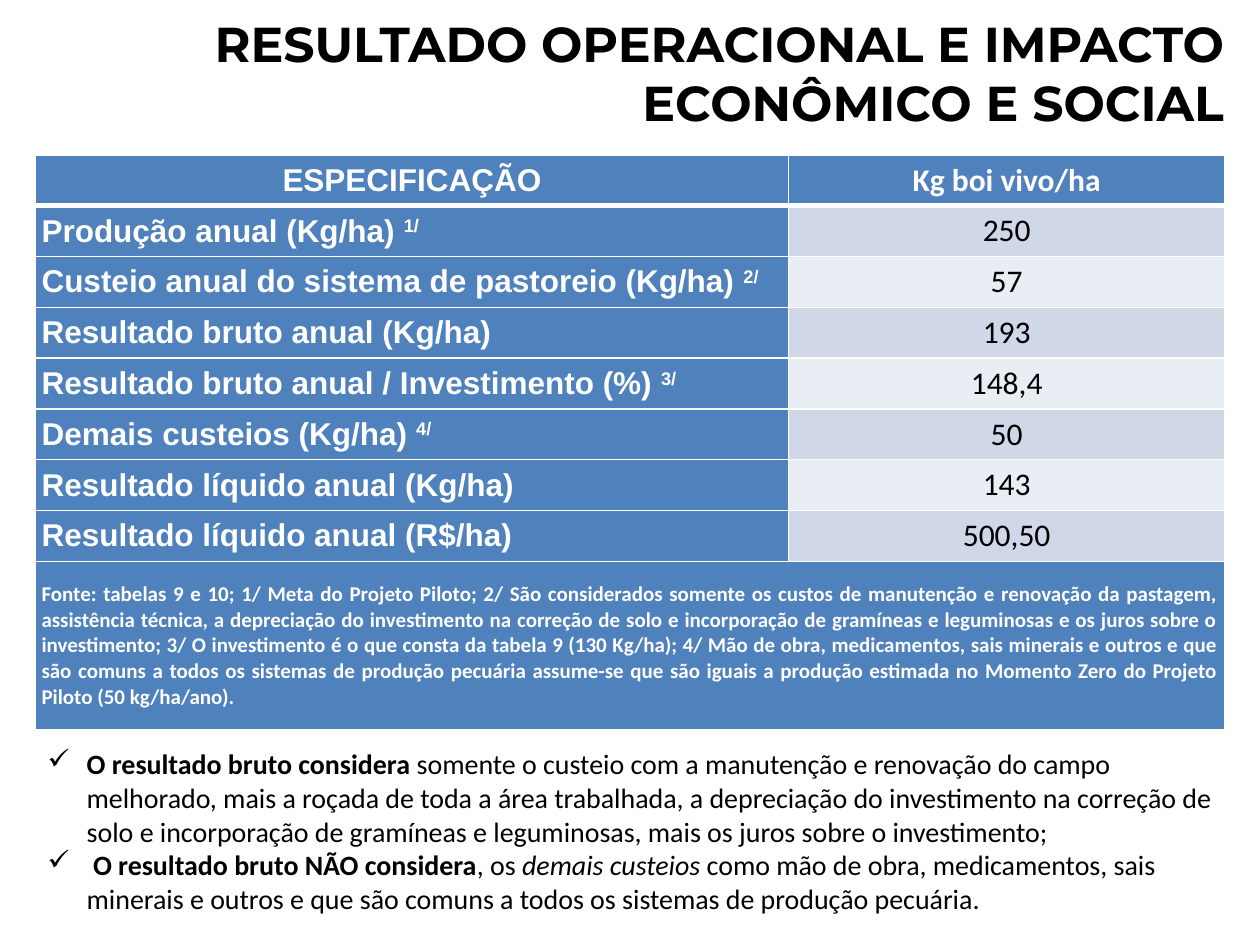
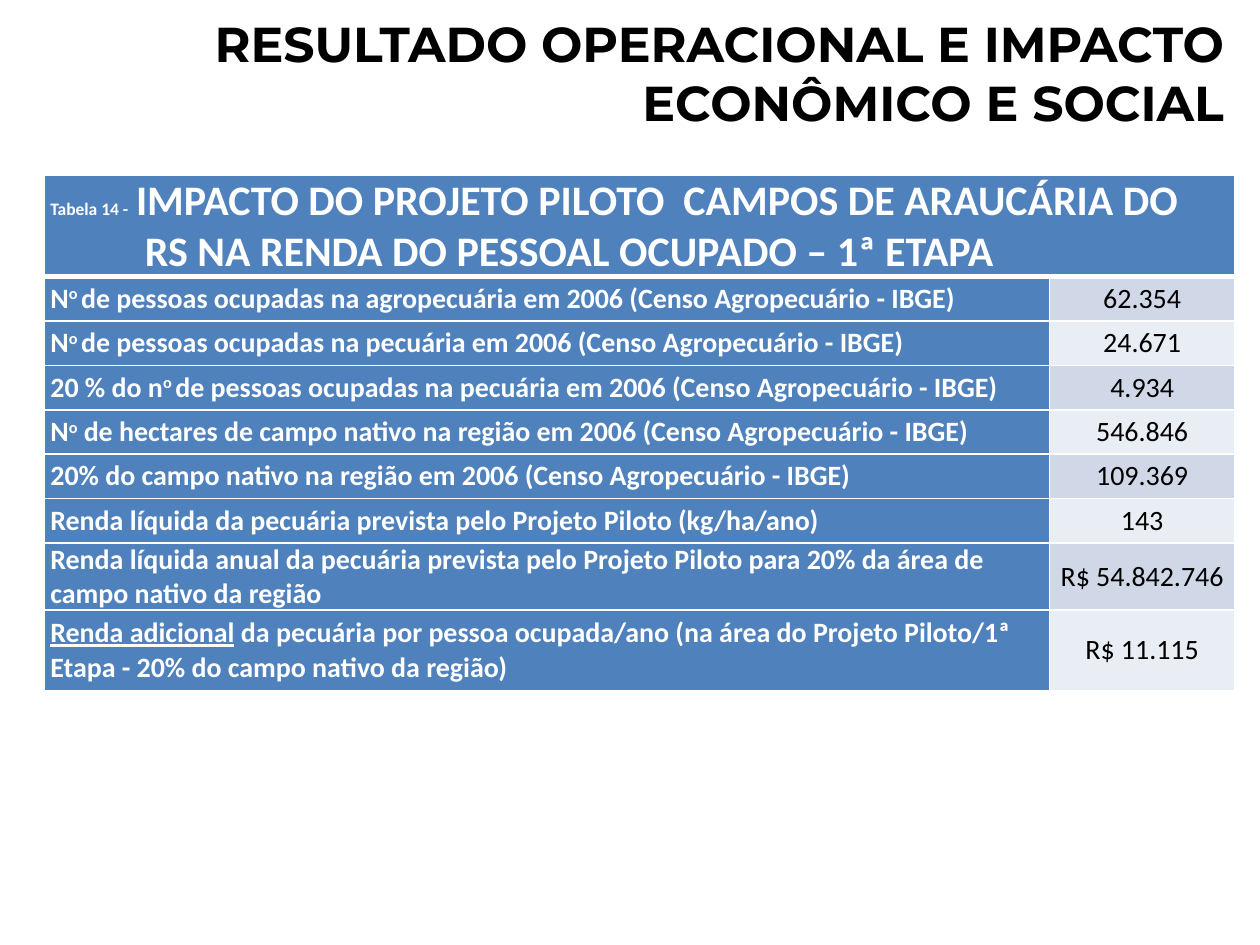
from dataclasses import dataclass
from typing import NamedTuple, Optional

from lxml import etree
from pptx import Presentation
from pptx import util as u
from pptx.dml.color import RGBColor
from pptx.enum import text as t
from pptx.oxml import ns

# Shared look
WIDE, HIGH = u.Inches(10), u.Inches(7.5)
BLUE, WHITE, BLACK = "4F81BD", "FFFFFF", "000000"
BANDS = "D0D8E8", "E9EDF4"
SANS, BODY, HEAD = "Arial", "Calibri", "Montserrat"
LEFT, MID, RIGHT, FULL = (t.PP_ALIGN.LEFT, t.PP_ALIGN.CENTER,
                          t.PP_ALIGN.RIGHT, t.PP_ALIGN.JUSTIFY)
TITLE = "RESULTADO OPERACIONAL E IMPACTO ECONÔMICO E SOCIAL"


class Box(NamedTuple):
    """Place and size, in percent of the slide."""
    left: float
    top: float
    width: float
    height: float


class Run(NamedTuple):
    text: str
    bold: Optional[bool] = None
    slant: Optional[bool] = None
    line: Optional[bool] = None
    up: bool = False
    size: Optional[float] = None


@dataclass
class Style:
    face: str
    size: float
    color: str
    bold: bool = False
    align: t.PP_ALIGN = LEFT
    hang: float = 0


@dataclass
class Cell:
    runs: list[Run]
    style: Style
    fill: str
    wide: bool = False


@dataclass
class Grid:
    """Table with column and row sizes in percent of the slide."""
    left: float
    top: float
    cols: list[float]
    rows: list[float]
    cells: list[list[Cell]]


def across(share: float) -> int:
    return round(WIDE * share / 100)


def down(share: float) -> int:
    return round(HIGH * share / 100)


def paint(code: str) -> RGBColor:
    return RGBColor.from_string(code)


# Text
def write(para, runs: list[Run], style: Style) -> None:
    para.alignment = style.align
    font = para.font
    font.name, font.size, font.bold = style.face, u.Pt(style.size), style.bold
    if style.hang:
        props = para._p.get_or_add_pPr()
        props.set("marL", str(u.Inches(style.hang)))
        props.set("indent", str(-u.Inches(style.hang)))
    for item in runs:
        run = para.add_run()
        run.text = item.text
        # Run colour takes precedence over the table style
        run.font.color.rgb = paint(style.color)
        run.font.bold, run.font.italic = item.bold, item.slant
        run.font.underline = item.line
        if item.size:
            run.font.size = u.Pt(item.size)
        if item.up:
            run._r.get_or_add_rPr().set("baseline", "30000")


def add_text(slide, box: Box, paras: list[list[Run]], style: Style,
             mark: str = "") -> None:
    shape = slide.shapes.add_textbox(across(box.left), down(box.top),
                                     across(box.width), down(box.height))
    frame = shape.text_frame
    frame.word_wrap = True
    frame.auto_size = t.MSO_AUTO_SIZE.SHAPE_TO_FIT_TEXT
    for num, runs in enumerate(paras):
        para = frame.add_paragraph() if num else frame.paragraphs[0]
        write(para, runs, style)
        if mark:
            bullet = etree.Element(ns.qn("a:buChar"), char=mark)
            para._p.get_or_add_pPr().insert(0, bullet)


# Tables
def edge(cell, top: float, base: float) -> None:
    props = cell._tc.get_or_add_tcPr()
    sides = ("L", 1), ("R", 1), ("T", top), ("B", base)
    for spot, (side, width) in enumerate(sides):
        line = etree.Element(ns.qn("a:ln" + side), w=str(u.Pt(width)))
        fill = etree.SubElement(line, ns.qn("a:solidFill"))
        etree.SubElement(fill, ns.qn("a:srgbClr"), val=WHITE)
        props.insert(spot, line)


def add_grid(slide, grid: Grid) -> None:
    table = slide.shapes.add_table(
        len(grid.rows), len(grid.cols), across(grid.left), down(grid.top),
        across(sum(grid.cols)), down(sum(grid.rows))).table
    table.first_row = table.horz_banding = False
    for col, share in zip(table.columns, grid.cols):
        col.width = across(share)
    for row, share in zip(table.rows, grid.rows):
        row.height = down(share)
    for r, items in enumerate(grid.cells):
        for c, item in enumerate(items):
            cell = table.cell(r, c)
            if item.wide:
                cell.merge(table.cell(r, len(grid.cols) - 1))
            cell.vertical_anchor = t.MSO_ANCHOR.MIDDLE
            cell.margin_left = cell.margin_right = u.Inches(0.05)
            cell.margin_top = cell.margin_bottom = 0
            cell.fill.solid()
            cell.fill.fore_color.rgb = paint(item.fill)
            write(cell.text_frame.paragraphs[0], item.runs, item.style)
        for c in range(len(grid.cols)):
            edge(table.cell(r, c), 3 if r == 1 else 1, 1 if r else 3)


def pairs(data: list[tuple[list[Run], str]], face: str,
          size: float) -> list[list[Cell]]:
    """Rows of a blue label and a value on alternating bands."""
    label = Style(face, size, WHITE, True)
    value = Style(BODY, size, BLACK, align=MID)
    return [[Cell(runs, label, BLUE),
             Cell([Run(num)], value, BANDS[i % 2])]
            for i, (runs, num) in enumerate(data)]


def add_page(deck):
    slide = deck.slides.add_slide(deck.slide_layouts[6])
    add_text(slide, Box(1.2, 0.8, 96.9, 13.87), [[Run(TITLE)]],
             Style(HEAD, 28, BLACK, True, RIGHT))
    return slide


# Slide 1: operating result
def note(text: str, num: str) -> list[Run]:
    return [Run(text + " "), Run(num, up=True)]


RESULT = [
    (note("Produção anual (Kg/ha)", "1/"), "250"),
    (note("Custeio anual do sistema de pastoreio (Kg/ha)", "2/"), "57"),
    ([Run("Resultado bruto anual (Kg/ha)")], "193"),
    (note("Resultado bruto anual / Investimento (%)", "3/"), "148,4"),
    (note("Demais custeios (Kg/ha)", "4/"), "50"),
    ([Run("Resultado líquido anual (Kg/ha)")], "143"),
    ([Run("Resultado líquido anual (R$/ha)")], "500,50"),
]
SOURCE = (
    "Fonte: tabelas 9 e 10; 1/ Meta do Projeto Piloto; 2/ São considerados "
    "somente os custos de manutenção e renovação da pastagem, assistência "
    "técnica, a depreciação do investimento na correção de solo e "
    "incorporação de gramíneas e leguminosas e os juros sobre o "
    "investimento; 3/ O investimento é o que consta da tabela 9 (130 Kg/ha); "
    "4/ Mão de obra, medicamentos, sais minerais e outros e que são comuns a "
    "todos os sistemas de produção pecuária assume-se que são iguais a "
    "produção estimada no Momento Zero do Projeto Piloto (50 kg/ha/ano).")
POINTS = [
    [Run("O resultado bruto considera ", bold=True),
     Run("somente o custeio com a manutenção e renovação do campo melhorado, "
         "mais a roçada de toda a área trabalhada, a depreciação do "
         "investimento na correção de solo e incorporação de gramíneas e "
         "leguminosas, mais os juros sobre o investimento;")],
    [Run(" O resultado bruto NÃO considera", bold=True),
     Run(", os "), Run("demais custeios", slant=True),
     Run(" como mão de obra, medicamentos, sais minerais e outros e que são "
         "comuns a todos os sistemas de produção pecuária.")],
]


def add_result(deck) -> None:
    slide = add_page(deck)
    top = [Cell([Run(text)], Style(face, 18, WHITE, True, MID), BLUE)
           for text, face in (("ESPECIFICAÇÃO", SANS),
                              ("Kg boi vivo/ha", BODY))]
    foot = Cell([Run(SOURCE)], Style(BODY, 12, WHITE, True, FULL), BLUE, True)
    add_grid(slide, Grid(2.8, 16.4, [59.8, 34.6], [5.38] * 8 + [17.87],
                         [top, *pairs(RESULT, SANS, 18), [foot]]))
    add_text(slide, Box(2.8, 78.4, 96.1, 19.33), POINTS,
             Style(BODY, 16, BLACK, hang=0.31), "✓")


# Slide 2: impact on income
CENSUS = "em 2006 (Censo Agropecuário - IBGE)"


def count(head: str, mark: str, rest: str) -> list[Run]:
    return [Run(head), Run(mark, up=True), Run(f"{rest} {CENSUS}")]


IMPACT = [
    (count("N", "o ", "de pessoas ocupadas na agropecuária"), "62.354"),
    (count("N", "o ", "de pessoas ocupadas na pecuária"), "24.671"),
    (count("20 % do n", "o ", "de pessoas ocupadas na pecuária"), "4.934"),
    (count("N", "o", " de hectares de campo nativo na região"), "546.846"),
    ([Run(f"20% do campo nativo na região {CENSUS}")], "109.369"),
    ([Run("Renda líquida da pecuária prevista pelo Projeto Piloto "
          "(kg/ha/ano)")], "143"),
    ([Run("Renda líquida anual da pecuária prevista pelo Projeto Piloto para "
          "20% da área de campo nativo da região")], "R$ 54.842.746"),
    ([Run("Renda adicional", line=True),
      Run(" da pecuária por pessoa ocupada/ano (na área do Projeto Piloto/1ª "
          "Etapa - 20% do campo nativo da região)")], "R$ 11.115"),
]


def add_impact(deck) -> None:
    slide = add_page(deck)
    top = Cell([Run("Tabela 14 -  ", size=10),
                Run("IMPACTO DO PROJETO PILOTO  CAMPOS DE ARAUCÁRIA DO RS NA "
                    "RENDA DO PESSOAL OCUPADO – 1ª ETAPA")],
               Style(BODY, 24, WHITE, True, hang=0.75), BLUE, True)
    add_grid(slide, Grid(3.5, 18.6, [79.8, 14.7],
                         [10.4] + [4.7] * 6 + [7.1, 8.5],
                         [[top], *pairs(IMPACT, BODY, 16)]))


def main() -> None:
    deck = Presentation()
    deck.slide_width, deck.slide_height = WIDE, HIGH
    add_result(deck)
    add_impact(deck)
    deck.save("out.pptx")


if __name__ == "__main__":
    main()
